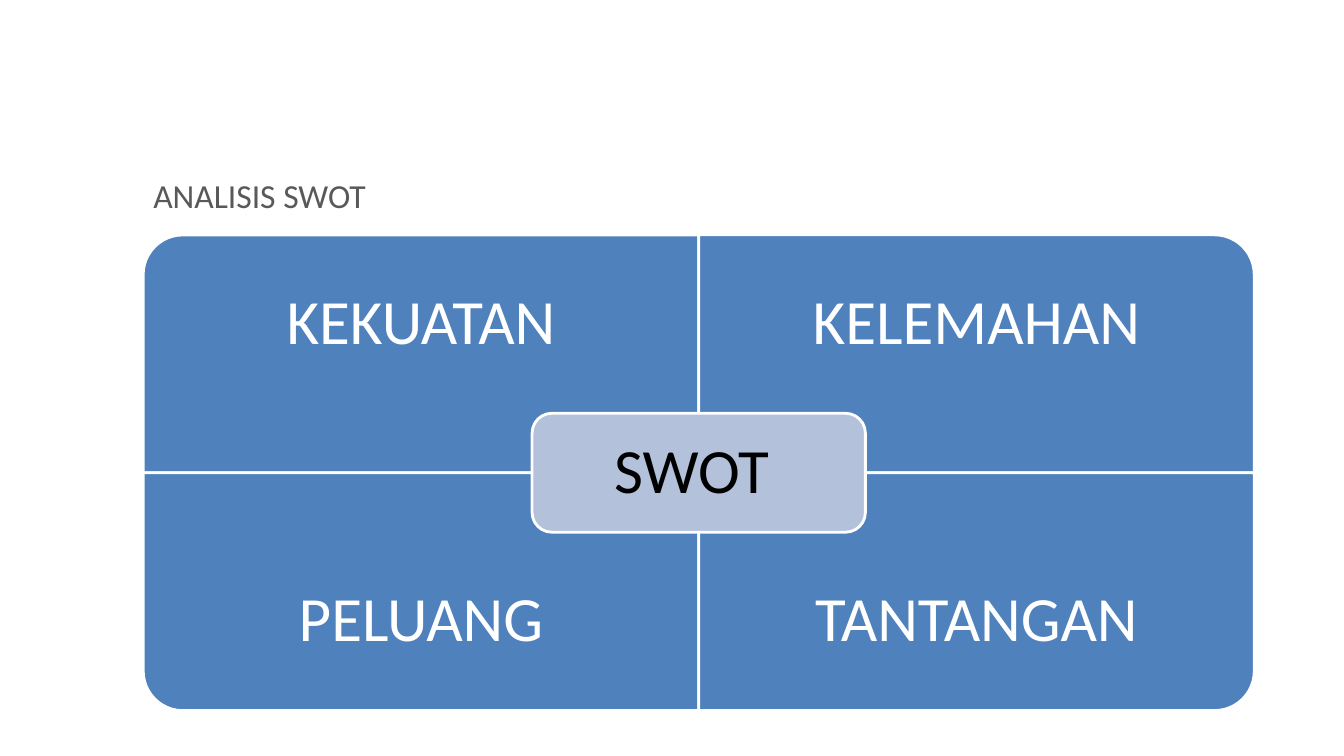
import dataclasses

import pptx
import pptx.dml.color
import pptx.enum.shapes
import pptx.enum.text
import pptx.util

Inches = pptx.util.Inches
Shape = pptx.enum.shapes.MSO_SHAPE


@dataclasses.dataclass(frozen=True)
class Theme:
    font: str = "Calibri"
    title_size: int = 24
    label_size: int = 45
    title_color: str = "595959"
    quadrant: str = "4F81BD"
    center: str = "B3C1DB"
    light: str = "FFFFFF"
    dark: str = "000000"
    outline: int = 2


class SwotSlide:
    """Draws the elements of a SWOT matrix in one theme."""

    def __init__(self, slide, theme):
        self.slide = slide
        self.theme = theme
        self.matrix = None

    def set_text(self, frame, text, size, color, align, inset):
        frame.word_wrap = True
        frame.auto_size = pptx.enum.text.MSO_AUTO_SIZE.NONE
        frame.vertical_anchor = pptx.enum.text.MSO_ANCHOR.MIDDLE
        frame.margin_left = frame.margin_right = Inches(inset[0])
        frame.margin_top = frame.margin_bottom = Inches(inset[1])
        paragraph = frame.paragraphs[0]
        paragraph.alignment = align
        run = paragraph.add_run()
        run.text = text
        run.font.name = self.theme.font
        run.font.size = pptx.util.Pt(size)
        run.font.color.rgb = pptx.dml.color.RGBColor.from_string(color)
        return paragraph

    def title(self, text, left, top, width, height):
        heading = self.slide.shapes.title
        heading.left, heading.top = Inches(left), Inches(top)
        heading.width, heading.height = Inches(width), Inches(height)
        self.set_text(heading.text_frame, text, self.theme.title_size,
                      self.theme.title_color, pptx.enum.text.PP_ALIGN.LEFT, (0.1, 0.05))

    def start_matrix(self):
        self.matrix = self.slide.shapes.add_group_shape()

    def panel(self, preset, left, top, width, height, fill, rotation=0):
        if rotation % 180:
            left, top = left + (width - height) / 2, top + (height - width) / 2
            width, height = height, width
        panel = self.matrix.shapes.add_shape(
            preset, Inches(left), Inches(top), Inches(width), Inches(height))
        panel.rotation = rotation
        panel.shadow.inherit = False
        panel.fill.solid()
        panel.fill.fore_color.rgb = pptx.dml.color.RGBColor.from_string(fill)
        panel.line.color.rgb = pptx.dml.color.RGBColor.from_string(self.theme.light)
        panel.line.width = pptx.util.Pt(self.theme.outline)

    def label(self, text, left, top, width, height, color, inset):
        label = self.matrix.shapes.add_textbox(
            Inches(left), Inches(top), Inches(width), Inches(height))
        paragraph = self.set_text(label.text_frame, text, self.theme.label_size, color,
                                  pptx.enum.text.PP_ALIGN.CENTER, (inset, inset))
        paragraph.line_spacing = 0.9


def main():
    presentation = pptx.Presentation()
    presentation.slide_width = Inches(13.33)
    presentation.slide_height = Inches(7.5)
    theme = Theme()
    swot = SwotSlide(presentation.slides.add_slide(presentation.slide_layouts[5]), theme)

    left, top, width, height = 1.42, 2.33, 5.51, 2.36
    label_height = height * 0.75
    quadrants = [
        ("KEKUATAN", 0, 0, 270),
        ("KELEMAHAN", 1, 0, 0),
        ("PELUANG", 0, 1, 180),
        ("TANTANGAN", 1, 1, 90),
    ]

    swot.title("ANALISIS SWOT", left, 1.7, 2 * width, 0.47)
    swot.start_matrix()
    for name, column, row, rotation in quadrants:
        x, y = left + column * width, top + row * height
        swot.panel(Shape.ROUND_1_RECTANGLE, x, y, width, height, theme.quadrant, rotation)
        swot.label(name, x, y + row * (height - label_height), width, label_height,
                   theme.light, 0.35)

    center_width, center_height, pad = width * 0.6, height / 2, 0.06
    x = left + width - center_width / 2
    y = top + height - center_height / 2
    swot.panel(Shape.ROUNDED_RECTANGLE, x, y, center_width, center_height, theme.center)
    swot.label("SWOT ", x + pad, y + pad, center_width - 2 * pad,
               center_height - 2 * pad, theme.dark, 0.19)

    presentation.save("out.pptx")


if __name__ == "__main__":
    main()
